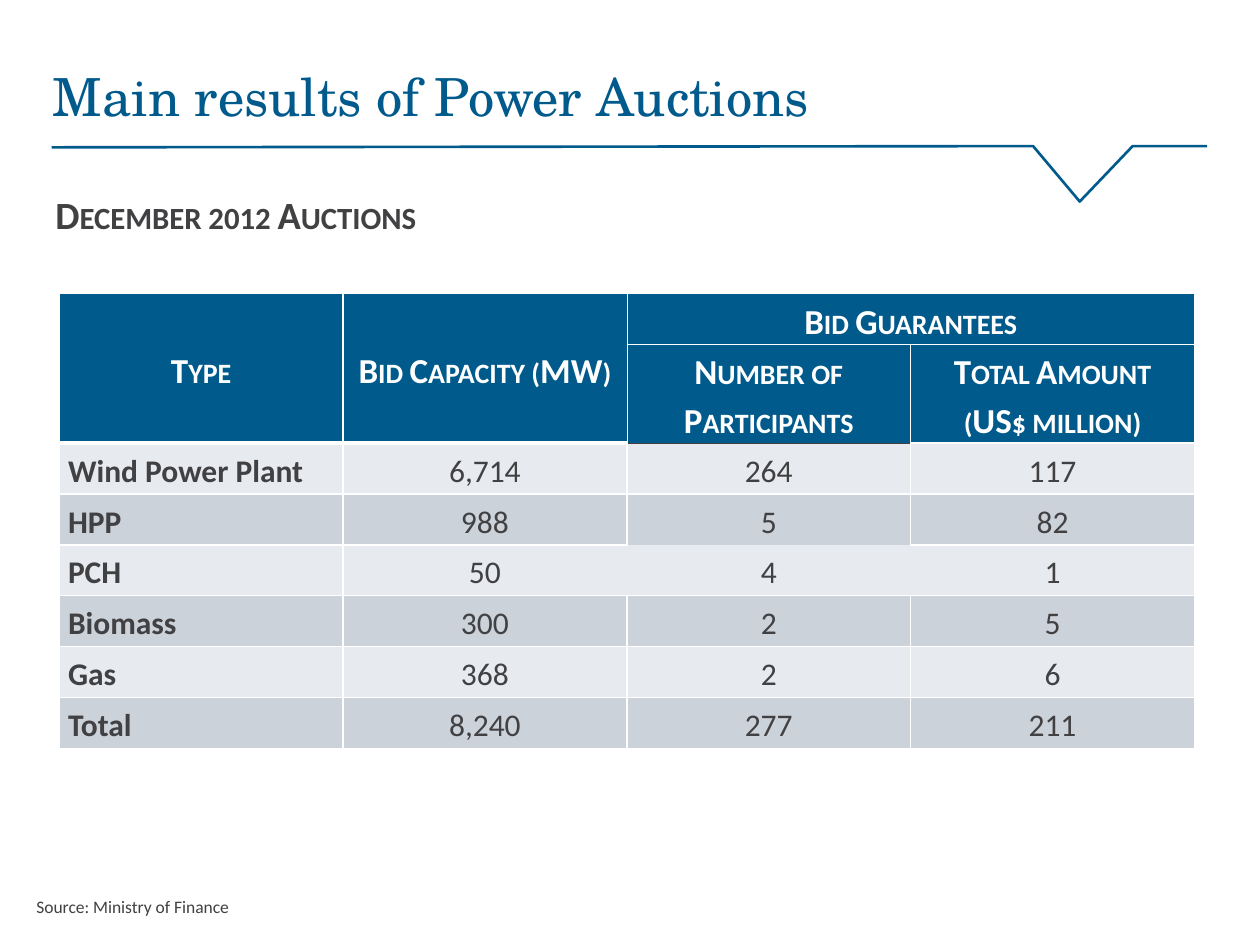
from pptx import Presentation
from pptx.dml.color import RGBColor as Rgb
from pptx.enum.text import MSO_ANCHOR as Anchor, MSO_AUTO_SIZE as Fit, PP_ALIGN as Align
from pptx.oxml.ns import qn
from pptx.util import Inches, Pt
from lxml.etree import SubElement as Sub, Element

BLUE, GRAY, WHITE = "005A8C", "414042", "FFFFFF"
BANDS = ["E7EAEE", "CCD2DA"]
SANS, SERIF = "Calibri", "TeX Gyre Schola"
COLS, ROWS = 100, 75  # grid of the slide


def tint(code):
    return Rgb.from_string(code)


def write(frame, text, size=18, font=SANS, color=GRAY, bold=False,
          small=False, align=Align.LEFT, lead=None):
    """Fill a text frame, one paragraph per line."""
    for i, line in enumerate(text.split("\n")):
        para = frame.paragraphs[0] if i == 0 else frame.add_paragraph()
        para.alignment = align
        if lead:
            para.line_spacing = lead
        run = para.add_run()
        run.text = line
        run.font.name, run.font.size, run.font.bold = font, Pt(size), bold
        run.font.color.rgb = tint(color)
        if small:
            run.font._element.set("cap", "small")


def edge(cell, **sides):
    """Set borders by side: (color, width), or None for no line."""
    props = cell._tc.get_or_add_tcPr()
    for i, side in enumerate("LRTB"):
        style = sides.get(side, (WHITE, 1))
        line = Element(qn("a:ln" + side))
        if style:
            line.set("w", str(Pt(style[1])))
            fill = Sub(line, qn("a:solidFill"))
            Sub(fill, qn("a:srgbClr")).set("val", style[0])
        else:
            Sub(line, qn("a:noFill"))
        props.insert(i, line)


class Deck:
    def __init__(self):
        self.prs = Presentation()
        self.prs.slide_width, self.prs.slide_height = Inches(10), Inches(7.5)
        self.slide = self.prs.slides.add_slide(self.prs.slide_layouts[6])
        self.shapes = self.slide.shapes

    def x(self, cols):
        return round(self.prs.slide_width * cols / COLS)

    def y(self, rows):
        return round(self.prs.slide_height * rows / ROWS)

    def area(self, left, top, width, height):
        return self.x(left), self.y(top), self.x(width), self.y(height)

    def rule(self, points):
        """Draw an open line through grid points."""
        spots = [(self.x(a), self.y(b)) for a, b in points]
        path = self.shapes.build_freeform(*spots[0])
        path.add_line_segments(spots[1:], close=False)
        shape = path.convert_to_shape()
        shape.shadow.inherit = False
        shape.fill.solid()
        shape.fill.fore_color.rgb = tint(WHITE)
        shape.line.color.rgb = tint(BLUE)
        shape.line.width = Pt(1.5)

    def text(self, box, text, inset=(0, 0), fit=Fit.NONE, **style):
        frame = self.shapes.add_textbox(*self.area(*box)).text_frame
        frame.word_wrap, frame.auto_size = True, fit
        frame.margin_left, frame.margin_top = self.x(inset[0]), self.y(inset[1])
        frame.margin_right, frame.margin_bottom = 0, self.y(inset[1])
        write(frame, text, **style)

    def table(self, box, heights, width):
        table = self.shapes.add_table(len(heights), width, *self.area(*box)).table
        for row, height in zip(table.rows, heights):
            row.height = self.y(height)
        for col in table.columns:
            col.width = self.x(box[2] / width)
        return table

    def cell(self, cell, text, fill, **style):
        cell.fill.solid()
        cell.fill.fore_color.rgb = tint(fill)
        cell.vertical_anchor = Anchor.MIDDLE
        cell.margin_left = cell.margin_right = self.x(0.7)
        cell.margin_top = cell.margin_bottom = 0
        if text:
            write(cell.text_frame, text, lead=1.15, **style)


def main():
    deck = Deck()

    # Title with notched rule
    deck.rule([(95.8, 11.6), (89.9, 11.6), (85.7, 16), (82, 11.6), (4.1, 11.7)])
    deck.text((4.2, 5.1, 87.4, 8.8), "Main results of Power Auctions",
              size=30, font=SERIF, color=BLUE)
    deck.text((2.4, 14.9, 91.8, 6.4), "December 2012 Auctions",
              inset=(2, 0.3), size=22, bold=True, small=True)

    # Table grid: the tall row holds two lines
    data = [
        ("Wind Power Plant", "6,714", "264", "117"),
        ("HPP", "988", "5", "82"),
        ("PCH", "50", "4", "1"),
        ("Biomass", "300", "2", "5"),
        ("Gas", "368", "2", "6"),
        ("Total", "8,240", "277", "211"),
    ]
    high, tall = 36.1, 7.8
    row = (high - tall) / (len(data) + 1)
    table = deck.table((4.7, 23.3, 90.1, high), [row, tall] + [row] * len(data), 4)

    # Header
    thin, thick = (WHITE, 0.25), (WHITE, 3)
    heads = [
        ["Type", "Bid Capacity (MW)", "Bid Guarantees", ""],
        ["", "", "Number of Participants", "Total Amount\n(US$ million)"],
    ]
    lines = [
        {"B": thick},
        {"R": thin, "B": thick},
        {"L": thin, "B": thin},
        {"B": thin},
        {"L": thin, "T": thin, "R": thin, "B": (GRAY, 0.25)},
        {"L": thin, "T": thin},
    ]
    for r, names in enumerate(heads):
        for c, name in enumerate(names):
            cell = table.cell(r, c)
            deck.cell(cell, name, BLUE, size=20, color=WHITE, bold=True,
                      small=True, align=Align.CENTER)
            edge(cell, **lines[c + 2 * r if c > 1 else c])
    for c in (0, 1):
        table.cell(0, c).merge(table.cell(1, c))
    table.cell(0, 2).merge(table.cell(0, 3))

    # Body rows; the PCH figures have no lines between them
    gaps = {1: {"R": None}, 2: dict.fromkeys("LRTB"), 3: {"L": None}}
    for r, values in enumerate(data):
        for c, value in enumerate(values):
            cell = table.cell(r + 2, c)
            deck.cell(cell, value, BANDS[r % 2], bold=c == 0,
                      align=Align.CENTER if c else Align.LEFT)
            sides = gaps.get(c, {}) if values[0] == "PCH" else {}
            if r == 0 and c < 2:
                sides = {"T": thick}
            elif r == 0 and c == 2:
                sides = {"T": (GRAY, 0.25)}
            edge(cell, **sides)

    # Source
    deck.text((1.9, 70.6, 64.9, 2.7), "Source: Ministry of Finance",
              inset=(1, 0.5), fit=Fit.SHAPE_TO_FIT_TEXT, size=10)

    deck.prs.save("out.pptx")


if __name__ == "__main__":
    main()
